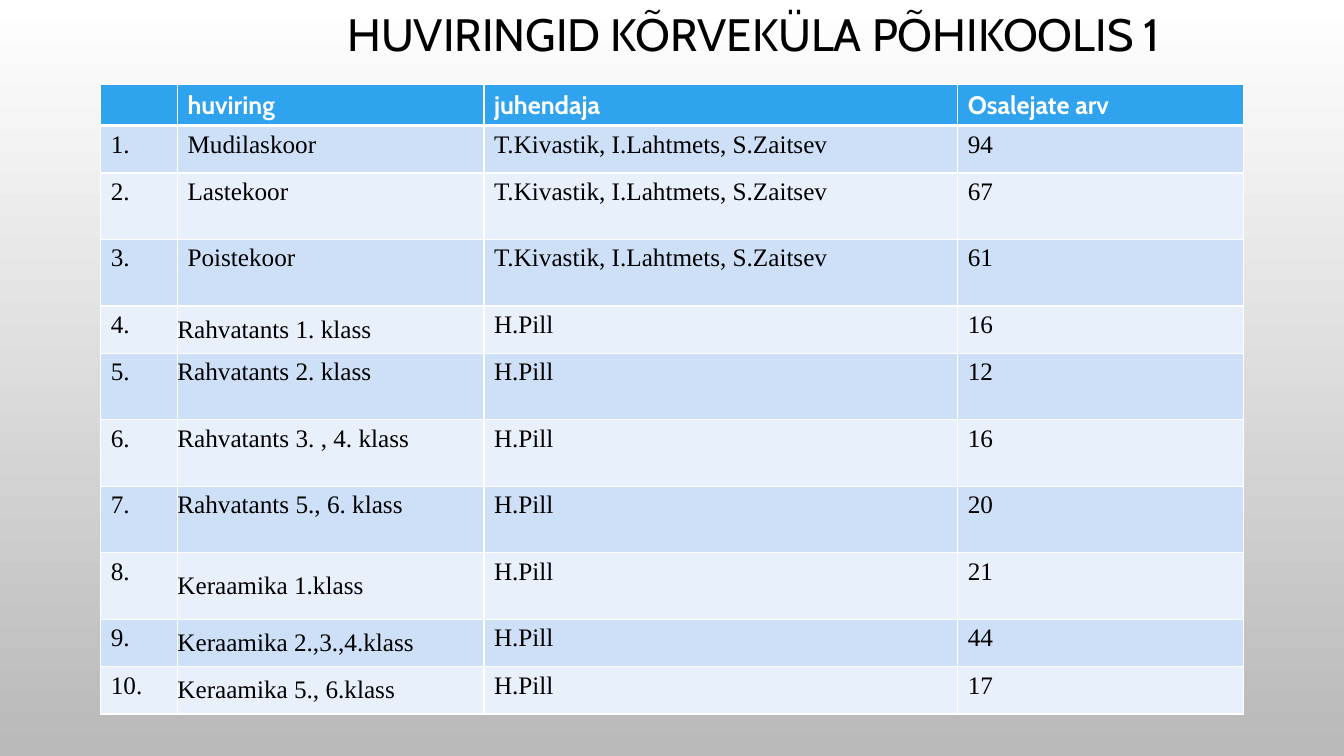
from lxml import etree
from pptx import Presentation
from pptx.dml.color import RGBColor
from pptx.enum.text import MSO_ANCHOR, PP_ALIGN
from pptx.oxml.ns import qn
from pptx.util import Inches, Pt

MIDDLE = MSO_ANCHOR.MIDDLE
TOP = MSO_ANCHOR.TOP
CENTER = PP_ALIGN.CENTER
COLORS = {"white": "FFFFFF", "gray": "B9B9B9", "black": "000000",
          "head": "2FA3EE", "odd": "CDE0F8", "even": "E8F0FC"}
SANS = "Cabin"
SERIF = "Times New Roman"


def write(para, text, size, font, color, bold=False):
    run = para.add_run()
    run.text = text
    run.font.size = Pt(size)
    run.font.name = font
    run.font.bold = bold
    run.font.color.rgb = RGBColor.from_string(COLORS[color])


def border(cell, side, width):
    line = etree.SubElement(cell._tc.get_or_add_tcPr(), qn("a:ln" + side), w=str(Pt(width)))
    fill = etree.SubElement(line, qn("a:solidFill"))
    etree.SubElement(fill, qn("a:srgbClr"), val=COLORS["white"])


prs = Presentation()
prs.slide_width = Inches(13.33)
prs.slide_height = Inches(7.5)
slide = prs.slides.add_slide(prs.slide_layouts[5])

back = slide.background.fill
back.gradient()
back.gradient_angle = 270
for stop, color, place in zip(back.gradient_stops, ("white", "gray"), (0, 1)):
    stop.color.rgb = RGBColor.from_string(COLORS[color])
    stop.position = place

title = slide.shapes.title
title.left, title.top = Inches(1.81), Inches(0.12)
title.width, title.height = Inches(11.33), Inches(0.5)
title.text_frame.vertical_anchor = MIDDLE
para = title.text_frame.paragraphs[0]
para.alignment = CENTER
para.line_spacing = 0.9
write(para, "HUVIRINGID KÕRVEKÜLA PÕHIKOOLIS 1", 32.4, SANS, "black")

CHOIR = "T.Kivastik, I.Lahtmets, S.Zaitsev"
DANCE = "H.Pill"
clubs = [
    ("Mudilaskoor", CHOIR, "94", 0.47),
    ("Lastekoor", CHOIR, "67", 0.66),
    ("Poistekoor", CHOIR, "61", 0.66),
    ("Rahvatants 1. klass", DANCE, "16", 0.47),
    ("Rahvatants 2. klass", DANCE, "12", 0.66),
    ("Rahvatants 3. , 4. klass", DANCE, "16", 0.66),
    ("Rahvatants 5., 6. klass", DANCE, "20", 0.66),
    ("Keraamika 1.klass", DANCE, "21", 0.66),
    ("Keraamika 2.,3.,4.klass", DANCE, "44", 0.47),
    ("Keraamika 5., 6.klass", DANCE, "17", 0.47),
]
rows = [("", "huviring", "juhendaja", "Osalejate arv", 0.39)]
rows += [(f"{n}.", *club) for n, club in enumerate(clubs, 1)]
widths = [0.76, 3.04, 4.7, 2.83]
high = sum(row[-1] for row in rows)

table = slide.shapes.add_table(len(rows), len(widths), Inches(1), Inches(0.84),
                               Inches(sum(widths)), Inches(high)).table
for col, width in zip(table.columns, widths):
    col.width = Inches(width)

for r, (*texts, height) in enumerate(rows):
    table.rows[r].height = Inches(height)
    shade = "head" if r == 0 else "odd" if r % 2 else "even"
    for c, text in enumerate(texts):
        cell = table.cell(r, c)
        for side in "LRTB":
            thick = (r, side) in ((0, "B"), (1, "T"))
            border(cell, side, 3 if thick else 1)
        cell.fill.solid()
        cell.fill.fore_color.rgb = RGBColor.from_string(COLORS[shade])
        if c == 1 and r > 3:
            cell.margin_left = cell.margin_right = 0
            if r in (5, 6, 7):
                cell.vertical_anchor = TOP
            else:
                cell.vertical_anchor = MIDDLE
                cell.margin_top = cell.margin_bottom = 0
        para = cell.text_frame.paragraphs[0]
        if text and r == 0:
            write(para, text, 18, SANS, "white", True)
        elif text:
            write(para, text, 18, SERIF, "black")

prs.save("out.pptx")
